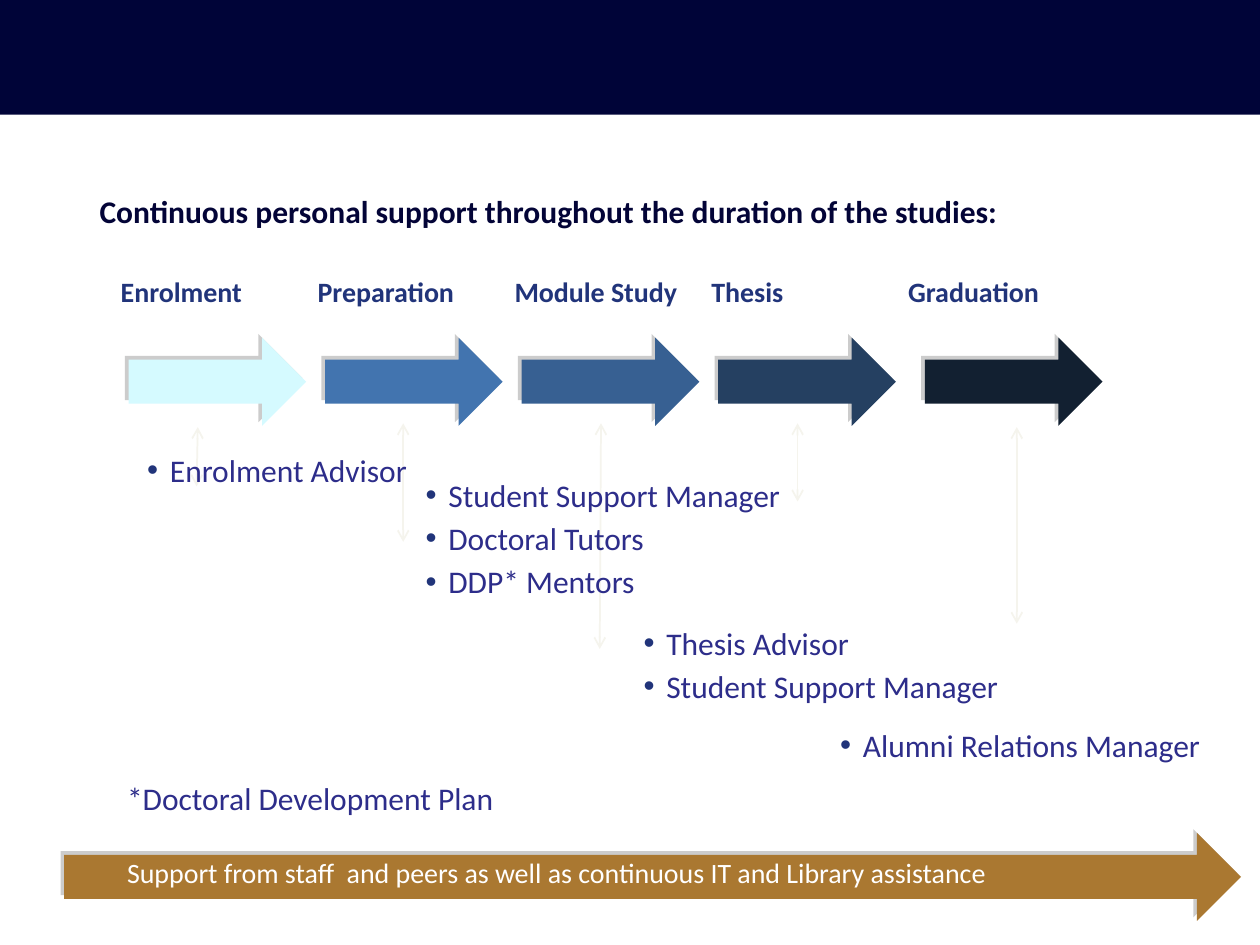
from dataclasses import dataclass

from lxml import etree
from pptx import Presentation
from pptx.dml.color import RGBColor
from pptx.enum.shapes import MSO_CONNECTOR, MSO_SHAPE
from pptx.enum.text import MSO_ANCHOR, MSO_AUTO_SIZE, PP_ALIGN
from pptx.oxml.ns import qn
from pptx.util import Inches, Pt

RECTANGLE = MSO_SHAPE.RECTANGLE
RIGHT_ARROW = MSO_SHAPE.RIGHT_ARROW
STRAIGHT = MSO_CONNECTOR.STRAIGHT
TOP = MSO_ANCHOR.TOP
LEFT = PP_ALIGN.LEFT
NO_FIT = MSO_AUTO_SIZE.NONE
TITLE_ONLY = 5


@dataclass(frozen=True)
class Theme:
    font: str = "Calibri"
    body_size: int = 18
    label_size: int = 16
    banner: str = "000438"
    heading: str = "030437"
    label: str = "21347A"
    body: str = "2D2D8A"
    link: str = "F5F4ED"
    support: str = "AA7831"
    support_text: str = "FFFFFF"
    shadow: str = "808080"


THEME = Theme()
PHASE_STEP = 1.5625
PHASES = [
    ("Enrolment", 1.18, 1.02, "D5FAFF"),
    ("Preparation", 1.3, 2.58, "4274AF"),
    ("Module Study", 1.51, 4.14, "376092"),
    ("Thesis", 0.78, 5.7, "254061"),
    ("Graduation", 1.26, 7.34, "122031"),
]
LINKS = [
    (1.57, 3.39, 1.56, 3.86),
    (3.2, 3.36, 3.2, 4.3),
    (4.77, 3.36, 4.76, 5.15),
    (6.33, 3.36, 6.33, 3.98),
    (8.07, 3.39, 8.07, 4.95),
]
ROLES = [
    ((1.07, 3.53, 2.38, 0.4), ["Enrolment Advisor"]),
    ((3.28, 3.73, 3.05, 0.73),
     ["Student Support Manager", "Doctoral Tutors", "DDP* Mentors"]),
    ((5.01, 4.9, 3.12, 0.78), ["Thesis Advisor", "Student Support Manager"]),
    ((6.57, 5.71, 3.12, 0.42), ["Alumni Relations Manager"]),
]


def place(shape, area):
    shape.left, shape.top, shape.width, shape.height = map(Inches, area)


def write(box, lines, size, color, bold=False):
    frame = box.text_frame
    frame.word_wrap = True
    frame.auto_size = NO_FIT
    frame.vertical_anchor = TOP
    frame.text = "\n".join(lines)
    for index, para in enumerate(frame.paragraphs):
        para.alignment = LEFT
        para.space_before = Pt(3 if index else 0)
        for span in para.runs:
            span.font.name = THEME.font
            span.font.size = Pt(size)
            span.font.bold = bold
            span.font.color.rgb = RGBColor.from_string(color)


def add_text(page, area, lines, size, color, bold=False):
    box = page.shapes.add_textbox(*map(Inches, area))
    write(box, lines, size, color, bold)
    return box


def add_bullets(page, area, lines):
    box = add_text(page, area, lines, THEME.body_size, THEME.body)
    for para in box.text_frame.paragraphs:
        properties = para._p.get_or_add_pPr()
        properties.set("marL", str(Inches(0.18)))
        properties.set("indent", str(-Inches(0.18)))
        bullet_color = etree.SubElement(properties, qn("a:buClr"))
        etree.SubElement(bullet_color, qn("a:srgbClr"), val=THEME.label)
        etree.SubElement(properties, qn("a:buFont"), typeface="Arial")
        etree.SubElement(properties, qn("a:buChar"), char="•")


def add_solid(page, preset, area, color):
    shape = page.shapes.add_shape(preset, *map(Inches, area))
    shape.fill.solid()
    shape.fill.fore_color.rgb = RGBColor.from_string(color)
    shape.line.fill.background()
    shape.shadow.inherit = False
    return shape


def add_arrow(page, area, color):
    arrow = add_solid(page, RIGHT_ARROW, area, color)
    effects = arrow._element.spPr.find(qn("a:effectLst"))
    shadow = etree.SubElement(effects, qn("a:outerShdw"), blurRad="0",
                              dist=str(Pt(3)), dir=str(225 * 60000),
                              algn="br", rotWithShape="0")
    tint = etree.SubElement(shadow, qn("a:srgbClr"), val=THEME.shadow)
    etree.SubElement(tint, qn("a:alpha"), val="40000")


def add_link(page, ends):
    link = page.shapes.add_connector(STRAIGHT, *map(Inches, ends))
    link.line.color.rgb = RGBColor.from_string(THEME.link)
    link.line.width = Pt(1)
    outline = link.line._get_or_add_ln()
    for end in ("a:headEnd", "a:tailEnd"):
        etree.SubElement(outline, qn(end), type="arrow")
    etree.SubElement(link._element.spPr, qn("a:effectLst"))


def main():
    deck = Presentation()
    deck.slide_width, deck.slide_height = Inches(10), Inches(7.5)
    page = deck.slides.add_slide(deck.slide_layouts[TITLE_ONLY])

    add_solid(page, RECTANGLE, (0, 0, 10, 0.91), THEME.banner)
    title = page.shapes.title
    place(title, (0.69, 1.47, 8.66, 0.47))
    write(title,
          ["Continuous personal support throughout the duration of the studies:"],
          THEME.body_size, THEME.heading, bold=True)

    for index, (name, width, arrow_left, color) in enumerate(PHASES):
        label_left = 0.86 + index * PHASE_STEP
        add_text(page, (label_left, 2.13, width, 0.37), [name],
                 THEME.label_size, THEME.label, bold=True)
        add_arrow(page, (arrow_left, 2.68, 1.41, 0.7), color)
    for ends in LINKS:
        add_link(page, ends)
    for area, lines in ROLES:
        add_bullets(page, area, lines)

    add_arrow(page, (0.51, 6.61, 9.34, 0.7), THEME.support)
    add_text(page, (0.91, 6.74, 8.18, 0.37),
             ["Support from staff  and peers as well as continuous IT and Library assistance"],
             THEME.label_size, THEME.support_text)
    add_text(page, (0.91, 6.13, 3.15, 0.71), ["*Doctoral Development Plan"],
             THEME.body_size, THEME.body)
    deck.save("out.pptx")


if __name__ == "__main__":
    main()
